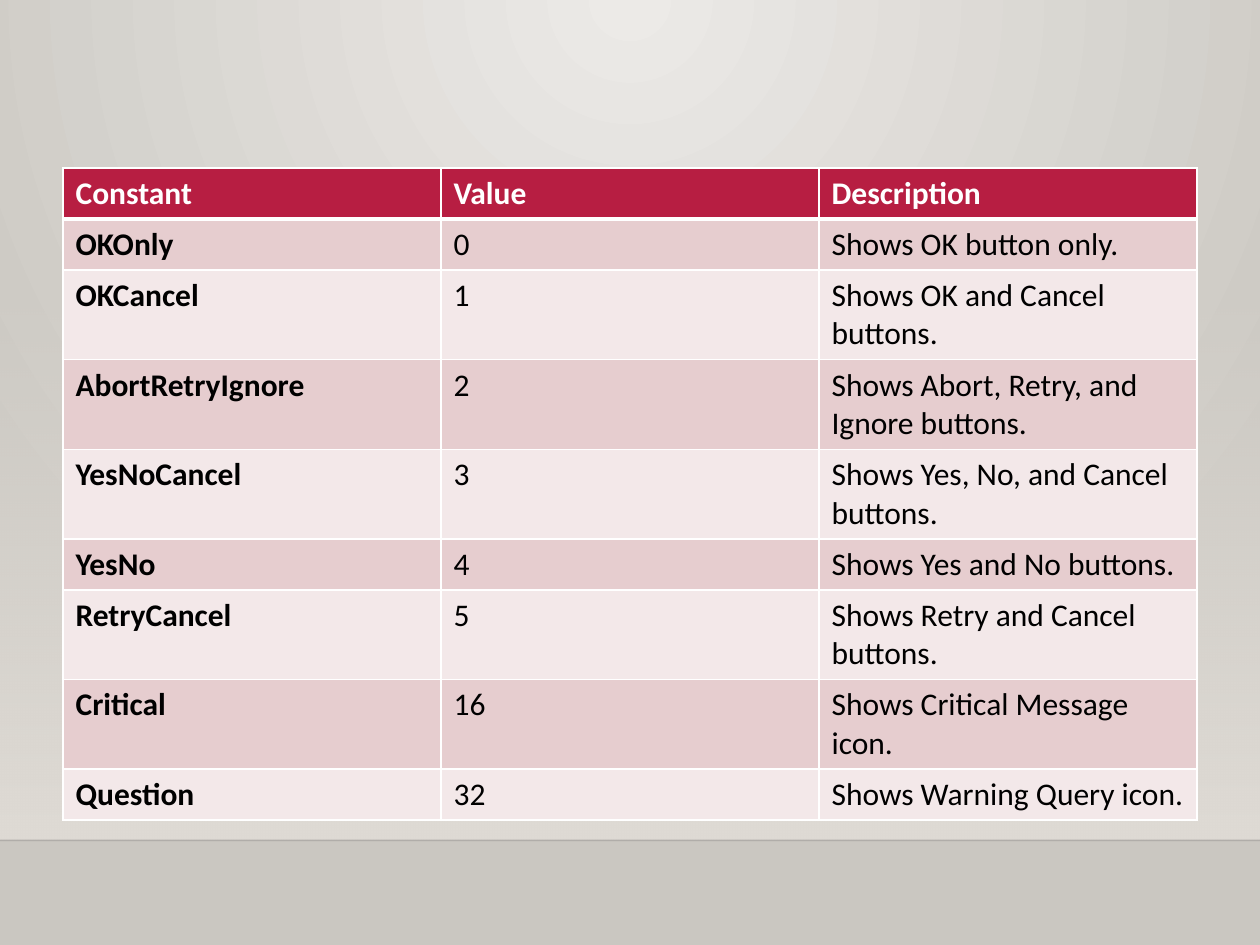
from lxml import etree
from pptx import Presentation
from pptx.dml.color import RGBColor
from pptx.enum.shapes import MSO_CONNECTOR, MSO_SHAPE
from pptx.oxml.ns import qn
from pptx.util import Pt

STRAIGHT = MSO_CONNECTOR.STRAIGHT
RECTANGLE = MSO_SHAPE.RECTANGLE

COLORS = {
    "header": "B71E42", "band_dark": "E6CDCF", "band_light": "F3E8E9",
    "white": "FFFFFF", "text": "000000", "floor_line": "000001",
    "glow": "ECEAE7", "wall": "CAC7C1", "haze": "DFDBD5",
}
FONT, FONT_SIZE = "Calibri", 18
SLIDE_WIDTH, SLIDE_HEIGHT = 720, 540
HAZE_TOP, FLOOR = 158.4, 480.24
TABLE_LEFT, TABLE_TOP, COLUMN_WIDTH, ROW_HEIGHT = 36, 96, 216, 29.2

ROWS = [
    ("Constant", "Value", "Description"),
    ("OKOnly", "0", "Shows OK button only."),
    ("OKCancel", "1", "Shows OK and Cancel buttons."),
    ("AbortRetryIgnore", "2", "Shows Abort, Retry, and Ignore buttons."),
    ("YesNoCancel", "3", "Shows Yes, No, and Cancel buttons."),
    ("YesNo", "4", "Shows Yes and No buttons."),
    ("RetryCancel", "5", "Shows Retry and Cancel buttons."),
    ("Critical", "16", "Shows Critical Message icon."),
    ("Question", "32", "Shows Warning Query icon."),
]


def rgb(name):
    return RGBColor.from_string(COLORS[name])


def add_child(parent, tag, **attributes):
    child = etree.SubElement(parent, qn(tag))
    for key, value in attributes.items():
        child.set(key, str(value))
    return child


def set_gradient(fill, owner, stops):
    fill.gradient()
    gradient = next(owner.iter(qn("a:gradFill")))
    for child in list(gradient):
        gradient.remove(child)
    stop_list = add_child(gradient, "a:gsLst")
    for position, color, opacity in stops:
        stop = add_child(stop_list, "a:gs", pos=position * 1000)
        color_element = add_child(stop, "a:srgbClr", val=COLORS[color])
        if opacity < 100:
            add_child(color_element, "a:alpha", val=opacity * 1000)
    return gradient


def set_borders(cell, row_index):
    properties = cell._tc.get_or_add_tcPr()
    widths = {"L": 1, "R": 1, "T": 3 if row_index == 1 else 1,
              "B": 3 if row_index == 0 else 1}
    for side, width in widths.items():
        line = add_child(properties, f"a:ln{side}", w=Pt(width))
        fill = add_child(line, "a:solidFill")
        add_child(fill, "a:srgbClr", val=COLORS["white"])


presentation = Presentation()
presentation.slide_width = Pt(SLIDE_WIDTH)
presentation.slide_height = Pt(SLIDE_HEIGHT)
slide = presentation.slides.add_slide(presentation.slide_layouts[6])

gradient = set_gradient(slide.background.fill, slide.element,
                        [(0, "glow", 100), (100, "wall", 100)])
circle = add_child(gradient, "a:path", path="circle")
add_child(circle, "a:fillToRect", l=43000, t=0, r=43000, b=100000)

haze = slide.shapes.add_shape(RECTANGLE, 0, Pt(HAZE_TOP), Pt(SLIDE_WIDTH), Pt(FLOOR - HAZE_TOP))
haze.shadow.inherit = False
haze.line.fill.background()
gradient = set_gradient(haze.fill, haze.element, [(0, "haze", 0), (100, "haze", 100)])
add_child(gradient, "a:lin", ang=5400000, scaled=0)

floor_line = slide.shapes.add_connector(STRAIGHT, 0, Pt(FLOOR), Pt(SLIDE_WIDTH), Pt(FLOOR))
floor_line.line.width = Pt(1)
floor_line.line.color.rgb = rgb("floor_line")
add_child(next(floor_line.element.iter(qn("a:srgbClr"))), "a:alpha", val=20000)
add_child(floor_line.element.spPr, "a:effectLst")

column_count = len(ROWS[0])
table = slide.shapes.add_table(
    len(ROWS), column_count, Pt(TABLE_LEFT), Pt(TABLE_TOP),
    Pt(COLUMN_WIDTH * column_count), Pt(ROW_HEIGHT * len(ROWS))).table
for row_index, values in enumerate(ROWS):
    table.rows[row_index].height = Pt(ROW_HEIGHT)
    is_header = row_index == 0
    band = "header" if is_header else "band_dark" if row_index % 2 else "band_light"
    for column_index, value in enumerate(values):
        cell = table.cell(row_index, column_index)
        set_borders(cell, row_index)
        cell.fill.solid()
        cell.fill.fore_color.rgb = rgb(band)
        cell.text_frame.text = value
        font = cell.text_frame.paragraphs[0].runs[0].font
        font.name = FONT
        font.size = Pt(FONT_SIZE)
        font.bold = is_header or column_index == 0
        font.color.rgb = rgb("white" if is_header else "text")

presentation.save("out.pptx")
